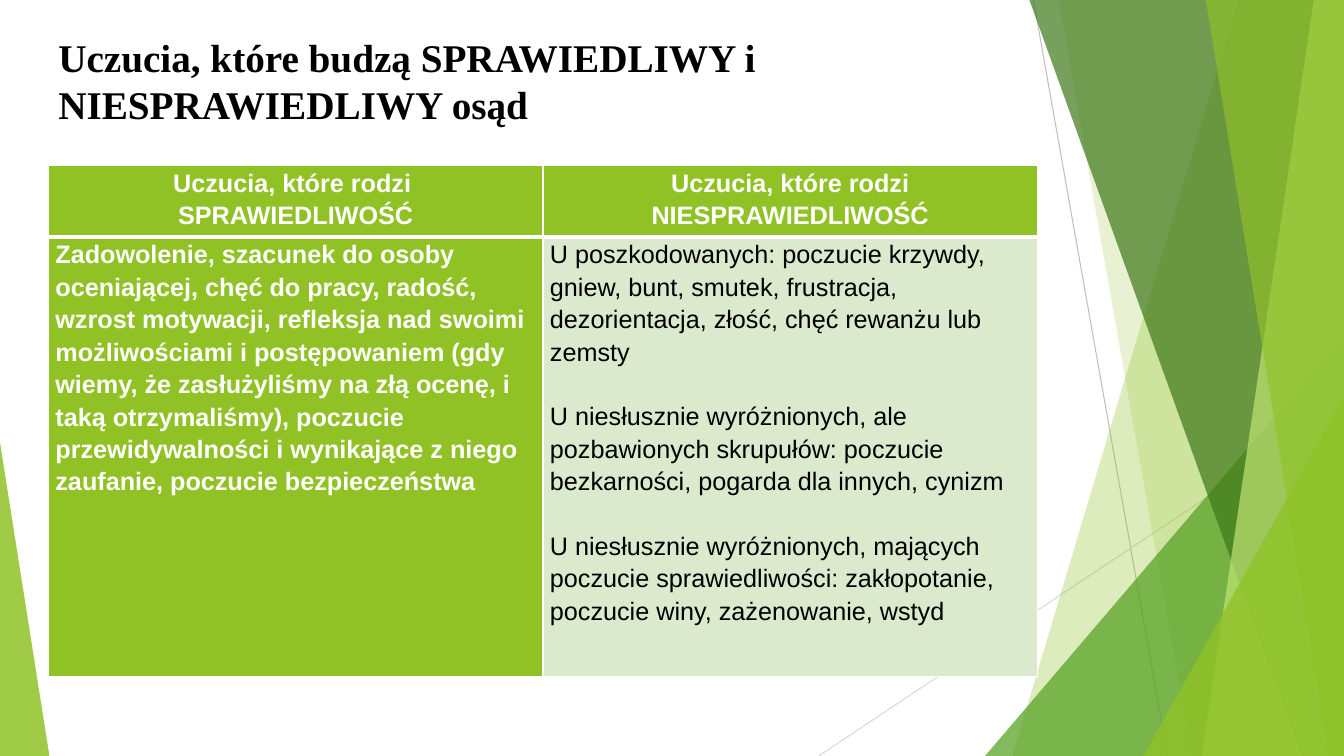
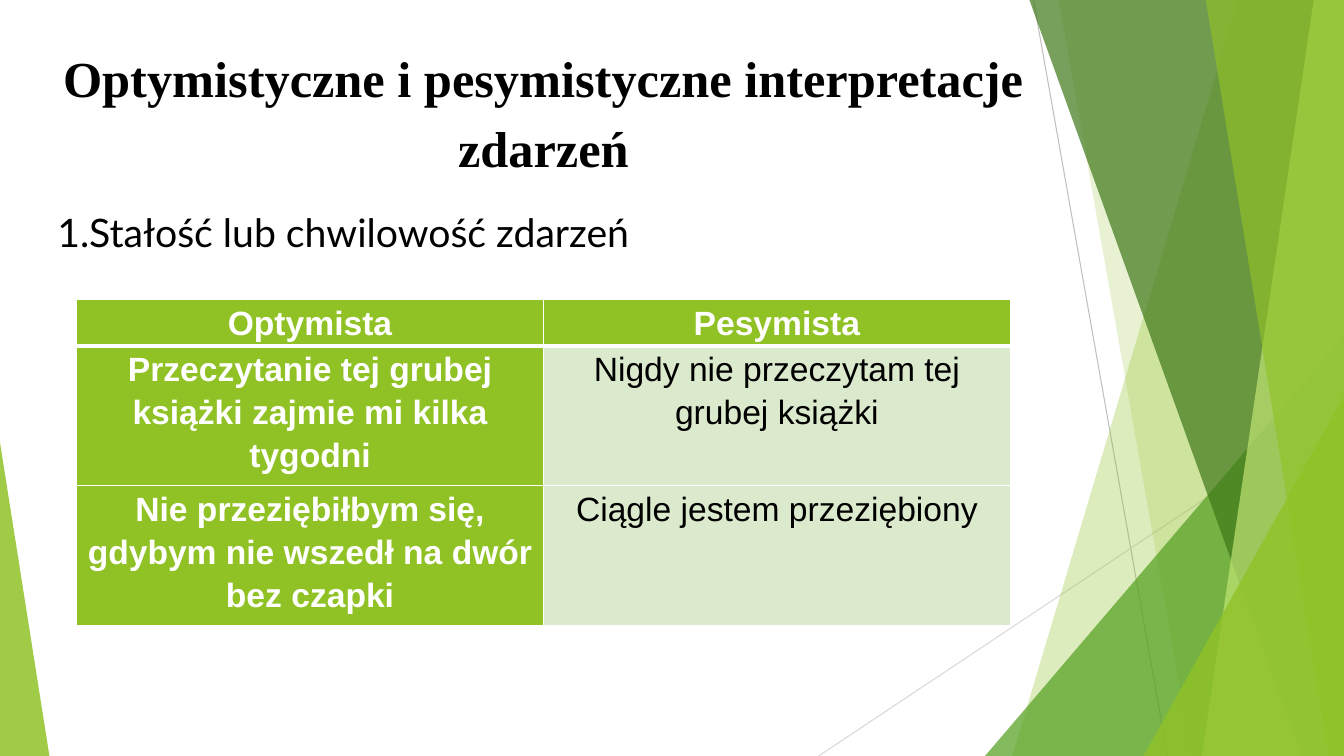
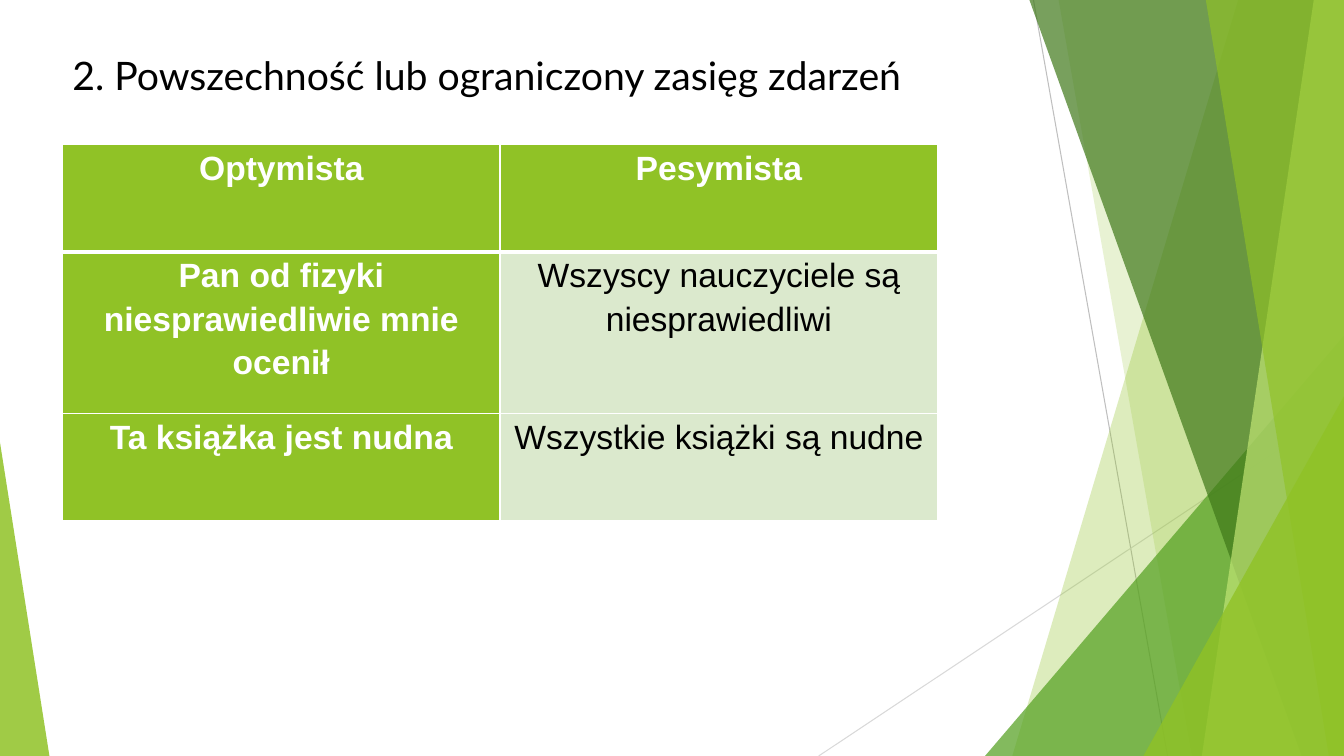
"""Build three slides on fair judgement and optimism over a faceted green backdrop."""
from lxml import etree
from pptx import Presentation
from pptx import util as u
from pptx.dml.color import RGBColor
from pptx.enum import shapes, text
from pptx.oxml import ns

PX = 9144
WIDE, HIGH = 1333, 750
HUES = {
    "lime": "90C226", "leaf": "54A021", "pine": "3F7819", "pale": "C0E474",
    "mint": "DBE9CD", "white": "FFFFFF", "black": "000000",
    "gray": "BFBFBF", "mist": "D9D9D9",
}
SERIF, SANS, LATO = "Times New Roman", "Arial", "Lato"
LEFT, MID = text.PP_ALIGN.LEFT, text.PP_ALIGN.CENTER

RAYS = [(1025, 0, 1158, HIGH, "gray"), (WIDE, 403, 812, HIGH, "mist")]
FACETS = [
    ("band", (1228, 1004), "lime", 30),
    ("band", (1050, 1182), "lime", 20),
    ("peak", (977, 333, 356, 1), "leaf", 72),
    ("band", (1021, 1291), "pine", 70),
    ("band", (1303, 1192), "pale", 70),
    ("band", (1196, 1318), "lime", 65),
    ("peak", (1134, 393, 199, 1), "lime", 80),
    ("peak", (0, 439, 49, 0), "lime", 85),
]

PAGES = [
    {
        "box": (48, 28, 981, 152),
        "heads": [("Uczucia, które budzą SPRAWIEDLIWY i NIESPRAWIEDLIWY osąd",
                   dict(size=28, face=SERIF, bold=True, lead=1.0))],
        "grid": (48, 164, 981), "rows": [71, 436],
        "size": 18, "side": LEFT, "gap": 23,
        "cells": [
            [["Uczucia, które rodzi ", "SPRAWIEDLIWOŚĆ"],
             ["Uczucia, które rodzi NIESPRAWIEDLIWOŚĆ"]],
            [["Zadowolenie, szacunek do osoby oceniającej, chęć do pracy, radość, "
              "wzrost motywacji, refleksja nad swoimi możliwościami i postępowaniem "
              "(gdy wiemy, że zasłużyliśmy na złą ocenę, i taką otrzymaliśmy), "
              "poczucie przewidywalności i wynikające z niego zaufanie, "
              "poczucie bezpieczeństwa"],
             ["U poszkodowanych: poczucie krzywdy, gniew, bunt, smutek, frustracja, "
              "dezorientacja, złość, chęć rewanżu lub zemsty",
              "U niesłusznie wyróżnionych, ale pozbawionych skrupułów: poczucie "
              "bezkarności, pogarda dla innych, cynizm",
              "U niesłusznie wyróżnionych, mających poczucie sprawiedliwości: "
              "zakłopotanie, poczucie winy, zażenowanie, wstyd"]],
        ],
    },
    {
        "box": (47, 33, 984, 397),
        "heads": [("Optymistyczne i pesymistyczne interpretacje zdarzeń",
                   dict(size=36, face=SERIF, bold=True, side=MID)),
                  ("Stałość lub chwilowość zdarzeń",
                   dict(size=28, face=LATO, lead=1.0, gap=22, count=True))],
        "grid": (76, 297, 926), "rows": [44, 139, 139],
        "size": 24, "side": MID, "gap": 0,
        "cells": [
            [["Optymista"], ["Pesymista"]],
            [["Przeczytanie tej grubej książki zajmie mi kilka tygodni"],
             ["Nigdy nie przeczytam tej grubej książki"]],
            [["Nie przeziębiłbym się, gdybym nie wszedł na dwór bez czapki"],
             ["Ciągle jestem przeziębiony"]],
        ],
    },
    {
        "box": (62, 39, 868, 60),
        "heads": [("2. Powszechność lub ograniczony zasięg zdarzeń",
                   dict(size=28, face=LATO))],
        "grid": (62, 143, 868), "rows": [107, 160, 107],
        "size": 24, "side": MID, "gap": 0,
        "cells": [
            [["Optymista"], ["Pesymista"]],
            [["Pan od fizyki niesprawiedliwie mnie ocenił"],
             ["Wszyscy nauczyciele są niesprawiedliwi"]],
            [["Ta książka jest nudna"], ["Wszystkie książki są nudne"]],
        ],
    },
]


def write(frame, words, first, size, face, hue="black", bold=False,
          side=LEFT, lead=1.15, gap=0, count=False):
    para = frame.paragraphs[0] if first else frame.add_paragraph()
    para.alignment, para.line_spacing = side, lead
    para.space_before = u.Pt(gap)
    if count:
        props = para._p.get_or_add_pPr()
        etree.SubElement(props, ns.qn("a:buAutoNum"), type="arabicPeriod")
    run = para.add_run()
    run.text = words
    font = run.font
    font.size, font.name, font.bold = u.Pt(size), face, bold
    font.color.rgb = RGBColor.from_string(HUES[hue])


def edge(cell, row):
    props = cell._tc.get_or_add_tcPr()
    thick = {"lnB": row == 0, "lnT": row == 1}
    for spot, tag in enumerate(("lnL", "lnR", "lnT", "lnB")):
        line = etree.Element(ns.qn("a:" + tag), w=str(u.Pt(3 if thick.get(tag) else 1)))
        fill = etree.SubElement(line, ns.qn("a:solidFill"))
        etree.SubElement(fill, ns.qn("a:srgbClr"), val=HUES["white"])
        props.insert(spot, line)


deck = Presentation()
deck.slide_width, deck.slide_height = WIDE * PX, HIGH * PX

for page in PAGES:
    slide = deck.slides.add_slide(deck.slide_layouts[6])
    pool = slide.shapes

    for *ends, hue in RAYS:
        ray = pool.add_connector(shapes.MSO_CONNECTOR.STRAIGHT, *[n * PX for n in ends])
        ray.line.color.rgb = RGBColor.from_string(HUES[hue])
        ray.line.width = u.Pt(0.75)
        etree.SubElement(ray.element.spPr, ns.qn("a:effectLst"))

    for kind, spots, hue, alpha in FACETS:
        if kind == "band":
            top, base = spots
            pen = pool.build_freeform(top, 0, scale=PX)
            pen.add_line_segments([(WIDE, 0), (WIDE, HIGH), (base, HIGH)], close=True)
            facet = pen.convert_to_shape()
        else:
            x, y, w, tip = spots
            facet = pool.add_shape(shapes.MSO_SHAPE.ISOSCELES_TRIANGLE,
                                   x * PX, y * PX, w * PX, (HIGH - y) * PX)
            facet.adjustments[0] = tip
        facet.shadow.inherit = False
        facet.line.fill.background()
        facet.fill.solid()
        facet.fill.fore_color.rgb = RGBColor.from_string(HUES[hue])
        tint = next(facet.element.spPr.iter(ns.qn("a:srgbClr")))
        etree.SubElement(tint, ns.qn("a:alpha"), val=str(alpha * 1000))

    frame = pool.add_textbox(*[n * PX for n in page["box"]]).text_frame
    frame.word_wrap = True
    for at, (words, style) in enumerate(page["heads"]):
        write(frame, words, at == 0, **style)

    x, y, w = page["grid"]
    rows = page["rows"]
    grid = pool.add_table(len(rows), 2, x * PX, y * PX, w * PX, sum(rows) * PX).table
    grid.first_row = grid.horz_banding = False
    for r, tall in enumerate(rows):
        grid.rows[r].height = tall * PX
        for c, lines in enumerate(page["cells"][r]):
            cell = grid.cell(r, c)
            plain = r > 0 and c == 1
            cell.margin_left = cell.margin_right = 7 * PX
            cell.margin_top = cell.margin_bottom = 0
            cell.fill.solid()
            cell.fill.fore_color.rgb = RGBColor.from_string(HUES["mint" if plain else "lime"])
            edge(cell, r)
            for at, words in enumerate(lines):
                write(cell.text_frame, words, at == 0, size=page["size"], face=SANS,
                      hue="black" if plain else "white", bold=not plain,
                      side=page["side"] if r else MID,
                      gap=page["gap"] if r and at else 0)

deck.save("out.pptx")
